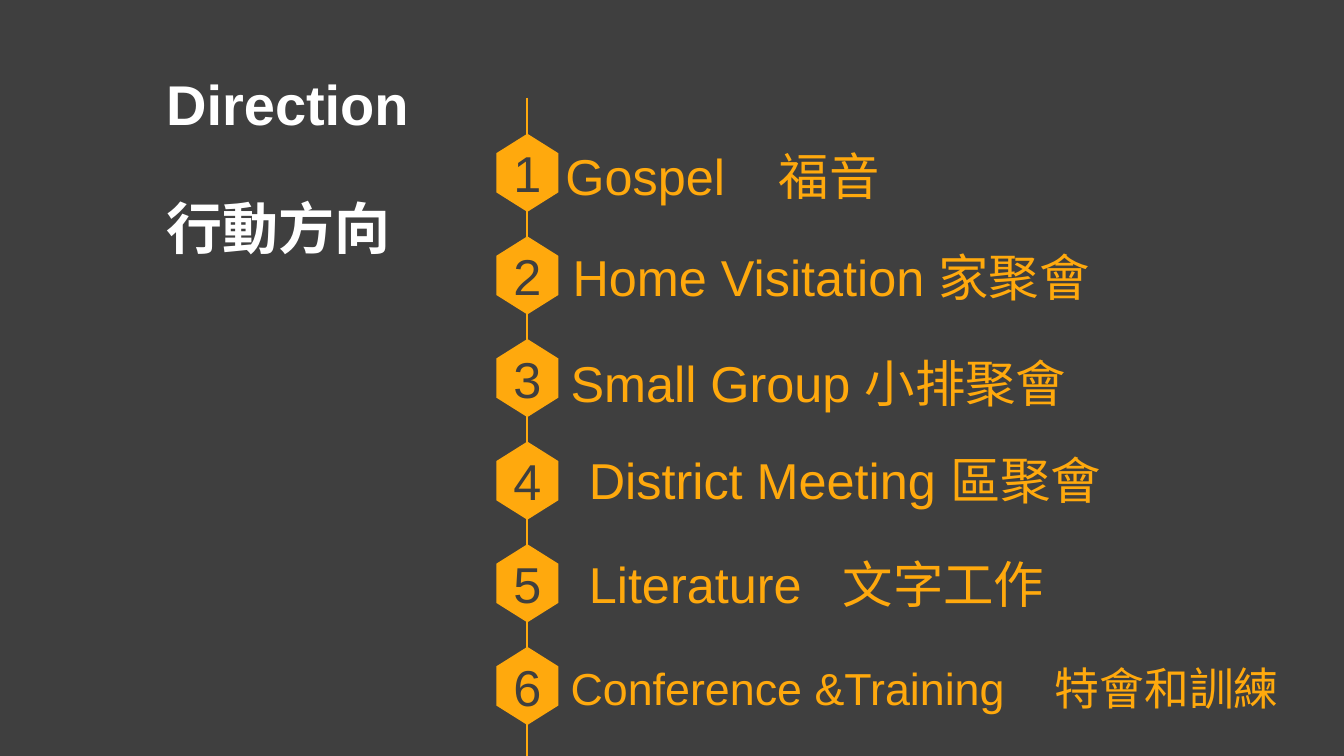
from lxml.etree import SubElement
from pptx import Presentation
from pptx.dml.color import RGBColor
from pptx.enum.shapes import MSO_CONNECTOR
from pptx.enum.text import MSO_ANCHOR, PP_ALIGN
from pptx.oxml.ns import qn
from pptx.util import Cm, Pt

COLORS = {"ground": "3F3F3F", "accent": "FFA90D", "title": "FFFFFF"}

# Timeline geometry in centimetres
AXIS_X = 13.29
FIRST_TOP = 3.37
PITCH = 2.586
HALF_WIDTH = 0.78
HEIGHT = 1.97
SHOULDER = 0.49

# Label, left, top, font size, tab stop
TOPICS = [
    ("Gospel\t福音", 14.07, 3.73, 36, 5.38),
    ("Home Visitation 家聚會", 14.25, 6.27, 36, None),
    ("Small Group 小排聚會", 14.2, 8.94, 36, None),
    ("District Meeting 區聚會", 14.66, 11.4, 36, None),
    ("Literature\t文字工作", 14.66, 14.02, 36, 6.4),
    ("Conference &Training\t特會和訓練", 14.2, 16.69, 32, 12.2),
]


def color(name):
    return RGBColor.from_string(COLORS[name])


def write(para, text, size=36, fill="accent", bold=False, align=PP_ALIGN.LEFT,
          spacing=0.9, before=0, tab=None):
    para.alignment = align
    para.line_spacing = spacing
    para.space_before = Pt(before)
    if tab:
        stops = SubElement(para._p.get_or_add_pPr(), qn("a:tabLst"))
        SubElement(stops, qn("a:tab"), pos=str(int(Cm(tab))), algn="l")
    span = para.add_run()
    span.text = text
    span.font.name = "Arial"
    span.font.size = Pt(size)
    span.font.bold = bold
    span.font.color.rgb = color(fill)


def set_frame(frame, left=0, top=0, anchor=MSO_ANCHOR.TOP, wrap=True):
    frame.word_wrap = wrap
    frame.vertical_anchor = anchor
    frame.margin_left, frame.margin_top = Cm(left), Cm(top)
    frame.margin_right = frame.margin_bottom = 0


def add_text_box(page, left, top, width, height, inset_left, inset_top):
    box = page.shapes.add_textbox(Cm(left), Cm(top), Cm(width), Cm(height))
    set_frame(box.text_frame, inset_left, inset_top)
    return box.text_frame


def add_axis(page):
    line = page.shapes.add_connector(
        MSO_CONNECTOR.STRAIGHT, Cm(AXIS_X), Cm(2.46), Cm(AXIS_X), Cm(19.05))
    line.line.color.rgb = color("accent")
    line.line.width = Pt(1.5)
    SubElement(line._element.spPr, qn("a:effectLst"))


def add_hexagon(page, number, top):
    left, right, bottom = AXIS_X - HALF_WIDTH, AXIS_X + HALF_WIDTH, top + HEIGHT
    corners = [
        (right, top + SHOULDER), (right, bottom - SHOULDER), (AXIS_X, bottom),
        (left, bottom - SHOULDER), (left, top + SHOULDER),
    ]
    builder = page.shapes.build_freeform(Cm(AXIS_X), Cm(top))
    builder.add_line_segments([(Cm(x), Cm(y)) for x, y in corners], close=True)
    hexagon = builder.convert_to_shape()
    hexagon.shadow.inherit = False
    hexagon.fill.solid()
    hexagon.fill.fore_color.rgb = color("accent")
    hexagon.line.fill.background()
    set_frame(hexagon.text_frame, anchor=MSO_ANCHOR.MIDDLE, wrap=False)
    write(hexagon.text_frame.paragraphs[0], str(number), fill="ground",
          align=PP_ALIGN.CENTER, spacing=1.0)


def add_topic(page, text, left, top, size, tab):
    frame = add_text_box(page, left, top, 18.92, 1.22, 0.18, 0.1)
    write(frame.paragraphs[0], text, size=size, tab=tab)


def add_title(page):
    frame = add_text_box(page, 4.04, 1.5, 7.9, 7.67, 0.15, 0.45)
    write(frame.paragraphs[0], "Direction", size=40, fill="title", bold=True)
    write(frame.add_paragraph(), "行動方向", size=40, fill="title", bold=True,
          before=45)


def main():
    deck = Presentation()
    deck.slide_width, deck.slide_height = Cm(33.87), Cm(19.05)
    page = deck.slides.add_slide(deck.slide_layouts[6])
    page.background.fill.solid()
    page.background.fill.fore_color.rgb = color("ground")

    # Numbered timeline
    add_axis(page)
    for index, topic in enumerate(TOPICS):
        add_hexagon(page, index + 1, FIRST_TOP + index * PITCH)
        add_topic(page, *topic)

    # Heading
    add_title(page)
    deck.save("out.pptx")


if __name__ == "__main__":
    main()
